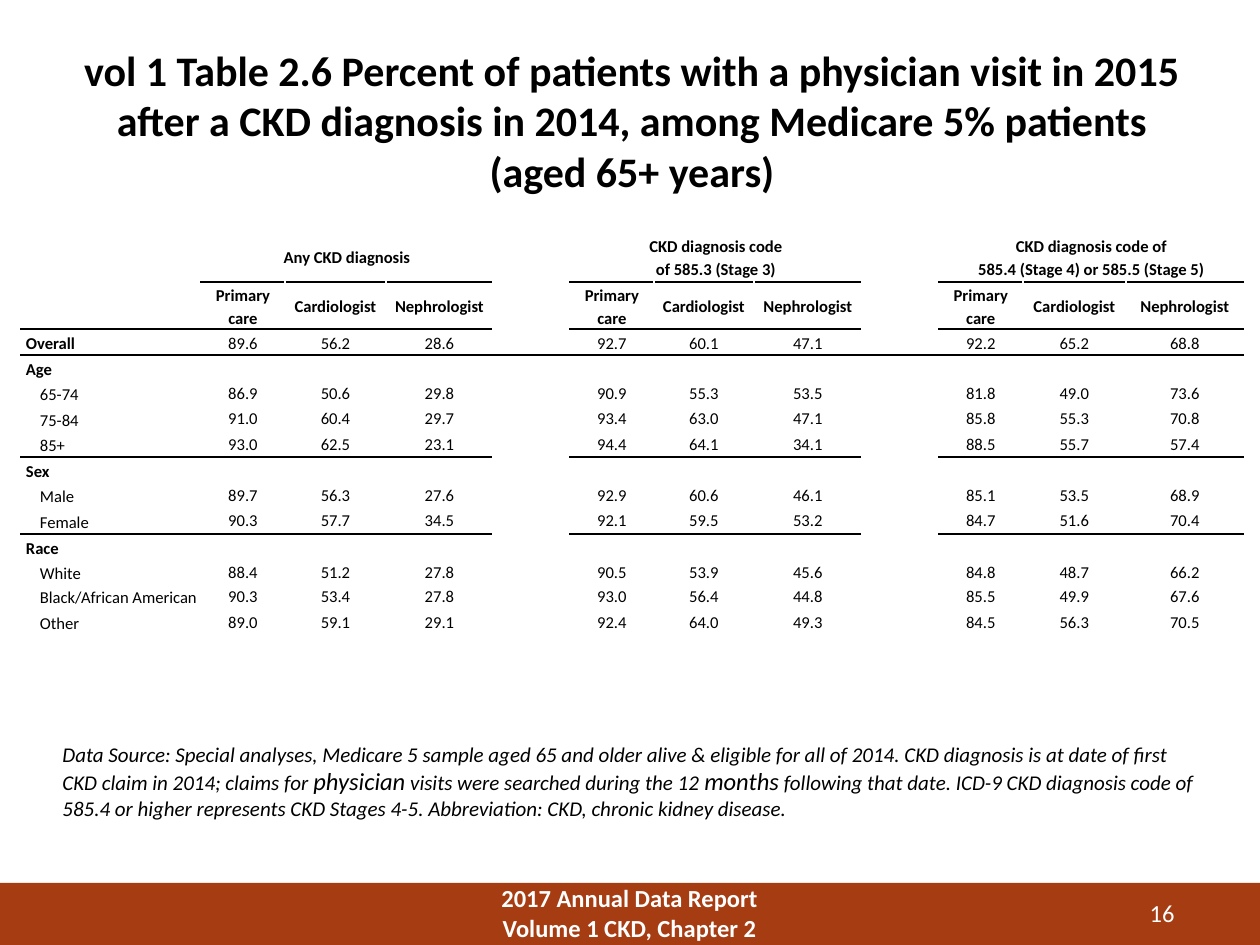
from lxml.etree import SubElement
from pptx import Presentation
from pptx.dml.color import RGBColor
from pptx.enum.shapes import MSO_SHAPE
from pptx.enum.text import MSO_ANCHOR as ANCHOR, PP_ALIGN as ALIGN
from pptx.oxml.ns import qn
from pptx.util import Pt

BLACK = RGBColor(0x00, 0x00, 0x00)
WHITE = RGBColor(0xFF, 0xFF, 0xFF)
RUST = RGBColor(0xA6, 0x3C, 0x12)
FONT = "Calibri"
EMU_PER_PX = 914400 / 126

TITLE = ("vol 1 Table 2.6 Percent of patients with a physician visit in 2015 "
         "after a CKD diagnosis in 2014, among Medicare 5% patients (aged 65+ years)")
FOOTER = ["2017 Annual Data Report", "Volume 1 CKD, Chapter 2"]
PAGE_NUMBER = "16"
SOURCE_NOTE = [
    ("Data Source: Special analyses, Medicare 5 sample aged 65 and older alive & "
     "eligible for all of 2014. CKD diagnosis is at date of first CKD claim in 2014; "
     "claims for ", 12),
    ("physician", 14),
    (" visits were searched during the 12 ", 12),
    ("months", 14),
    (" following that date. ICD-9 CKD diagnosis code of 585.4 or higher represents "
     "CKD Stages 4-5. Abbreviation: CKD, chronic kidney disease.", 12),
]

DIAGNOSES = ["Any CKD diagnosis",
             "CKD diagnosis code\vof 585.3 (Stage 3)",
             "CKD diagnosis code of\v585.4 (Stage 4) or 585.5 (Stage 5)"]
PHYSICIANS = ["Primary care", "Cardiologist", "Nephrologist"]
# Label, then three physician percentages for each diagnosis
VISITS = [
    ("Overall", "89.6 56.2 28.6 92.7 60.1 47.1 92.2 65.2 68.8"),
    ("Age", ""),
    ("65-74", "86.9 50.6 29.8 90.9 55.3 53.5 81.8 49.0 73.6"),
    ("75-84", "91.0 60.4 29.7 93.4 63.0 47.1 85.8 55.3 70.8"),
    ("85+", "93.0 62.5 23.1 94.4 64.1 34.1 88.5 55.7 57.4"),
    ("Sex", ""),
    ("Male", "89.7 56.3 27.6 92.9 60.6 46.1 85.1 53.5 68.9"),
    ("Female", "90.3 57.7 34.5 92.1 59.5 53.2 84.7 51.6 70.4"),
    ("Race", ""),
    ("White", "88.4 51.2 27.8 90.5 53.9 45.6 84.8 48.7 66.2"),
    ("Black/African American", "90.3 53.4 27.8 93.0 56.4 44.8 85.5 49.9 67.6"),
    ("Other", "89.0 59.1 29.1 92.4 64.0 49.3 84.5 56.3 70.5"),
]
SECTIONS = ("Overall", "Age", "Sex", "Race")

COLUMN_WIDTHS = [180, 84, 101, 107, 77, 84, 100, 108, 77, 84, 103, 118]
ROW_HEIGHTS = [51, 47, 26, 26, 25, 26, 25, 26, 25, 26, 26, 24, 26, 25]
GROUP_STARTS = (1, 5, 9)
DATA_COLUMNS = [start + i for start in GROUP_STARTS for i in range(3)]
# Row above each rule, and the columns the rule crosses
RULES = {0: DATA_COLUMNS, 1: [0] + DATA_COLUMNS, 2: range(len(COLUMN_WIDTHS)),
         6: [0] + DATA_COLUMNS, 9: [0] + DATA_COLUMNS}


def px(length):
    return round(length * EMU_PER_PX)


def style(paragraph, size, color=BLACK, bold=False, italic=False, align=ALIGN.LEFT):
    paragraph.alignment = align
    font = paragraph.font
    font.name, font.bold, font.italic = FONT, bold, italic
    font.color.rgb = color
    if size:
        font.size = Pt(size)


def add_text(slide, box, lines, size, **look):
    """Add a text box; a line is a string or a list of (text, size) runs."""
    frame = slide.shapes.add_textbox(*map(px, box)).text_frame
    frame.word_wrap = True
    for i, line in enumerate(lines):
        paragraph = frame.add_paragraph() if i else frame.paragraphs[0]
        runs = [(line, None)] if isinstance(line, str) else line
        for text, run_size in runs:
            run = paragraph.add_run()
            run.text = text
            if run_size:
                run.font.size = Pt(run_size)
        style(paragraph, size, **look)


def rule_edges(cell, row, col):
    for tag, row_above in (("a:lnT", row - 1), ("a:lnB", row)):
        if col in RULES.get(row_above, ()):
            line = SubElement(cell._tc.get_or_add_tcPr(), qn(tag), w=str(Pt(1)))
            fill = SubElement(line, qn("a:solidFill"))
            SubElement(fill, qn("a:srgbClr"), val=str(BLACK))


def table_texts():
    """Return {(row, column): text} for every filled cell."""
    texts = {}
    for start, diagnosis in zip(GROUP_STARTS, DIAGNOSES):
        texts[0, start] = diagnosis
    for col, physician in zip(DATA_COLUMNS, PHYSICIANS * len(DIAGNOSES)):
        texts[1, col] = physician
    for row, (label, percents) in enumerate(VISITS, start=2):
        texts[row, 0] = label
        for col, percent in zip(DATA_COLUMNS, percents.split()):
            texts[row, col] = percent
    return texts


def fill_cell(cell, row, col, text):
    is_label = col == 0
    cell.margin_left, cell.margin_right = px(5), px(0 if is_label else 5)
    cell.margin_top = cell.margin_bottom = 0
    cell.vertical_anchor = ANCHOR.MIDDLE if is_label or row <= 2 else ANCHOR.TOP
    cell.text = text
    paragraph = cell.text_frame.paragraphs[0]
    paragraph.line_spacing = 1.15
    if is_label and text and text not in SECTIONS:
        paragraph._p.get_or_add_pPr().set("marL", str(px(14)))
    style(paragraph, 9.5, bold=row < 2 or text in SECTIONS,
          align=ALIGN.LEFT if is_label else ALIGN.CENTER)
    if not text:
        SubElement(paragraph._p, qn("a:endParaRPr"), sz="950")
    rule_edges(cell, row, col)
    cell.fill.background()


def add_visit_table(slide):
    table = slide.shapes.add_table(
        len(ROW_HEIGHTS), len(COLUMN_WIDTHS), px(21), px(231),
        px(sum(COLUMN_WIDTHS)), px(sum(ROW_HEIGHTS))).table
    table.first_row = table.horz_banding = False
    for column, width in zip(table.columns, COLUMN_WIDTHS):
        column.width = px(width)
    for row, height in zip(table.rows, ROW_HEIGHTS):
        row.height = px(height)
    texts = table_texts()
    for row in range(len(ROW_HEIGHTS)):
        for col in range(len(COLUMN_WIDTHS)):
            fill_cell(table.cell(row, col), row, col, texts.get((row, col), ""))
    table.cell(0, 0).merge(table.cell(1, 0))
    for start in GROUP_STARTS:
        table.cell(0, start).merge(table.cell(0, start + 2))


def main():
    deck = Presentation()
    deck.slide_width, deck.slide_height = px(1260), px(945)
    slide = deck.slides.add_slide(deck.slide_layouts[6])

    band = slide.shapes.add_shape(MSO_SHAPE.RECTANGLE, 0, px(883), px(1260), px(62))
    band.shadow.inherit = False
    band.fill.solid()
    band.fill.fore_color.rgb = RUST
    band.line.fill.background()

    add_text(slide, (451, 877, 357, 68), FOOTER, 14,
             color=WHITE, bold=True, align=ALIGN.CENTER)
    add_text(slide, (1061, 892, 126, 38), [PAGE_NUMBER], 14,
             color=WHITE, align=ALIGN.RIGHT)
    add_text(slide, (60, 38, 1144, 157), [TITLE], 24, bold=True, align=ALIGN.CENTER)
    add_visit_table(slide)
    add_text(slide, (50, 735, 1166, 93), [SOURCE_NOTE], None, italic=True)
    deck.save("out.pptx")


if __name__ == "__main__":
    main()
